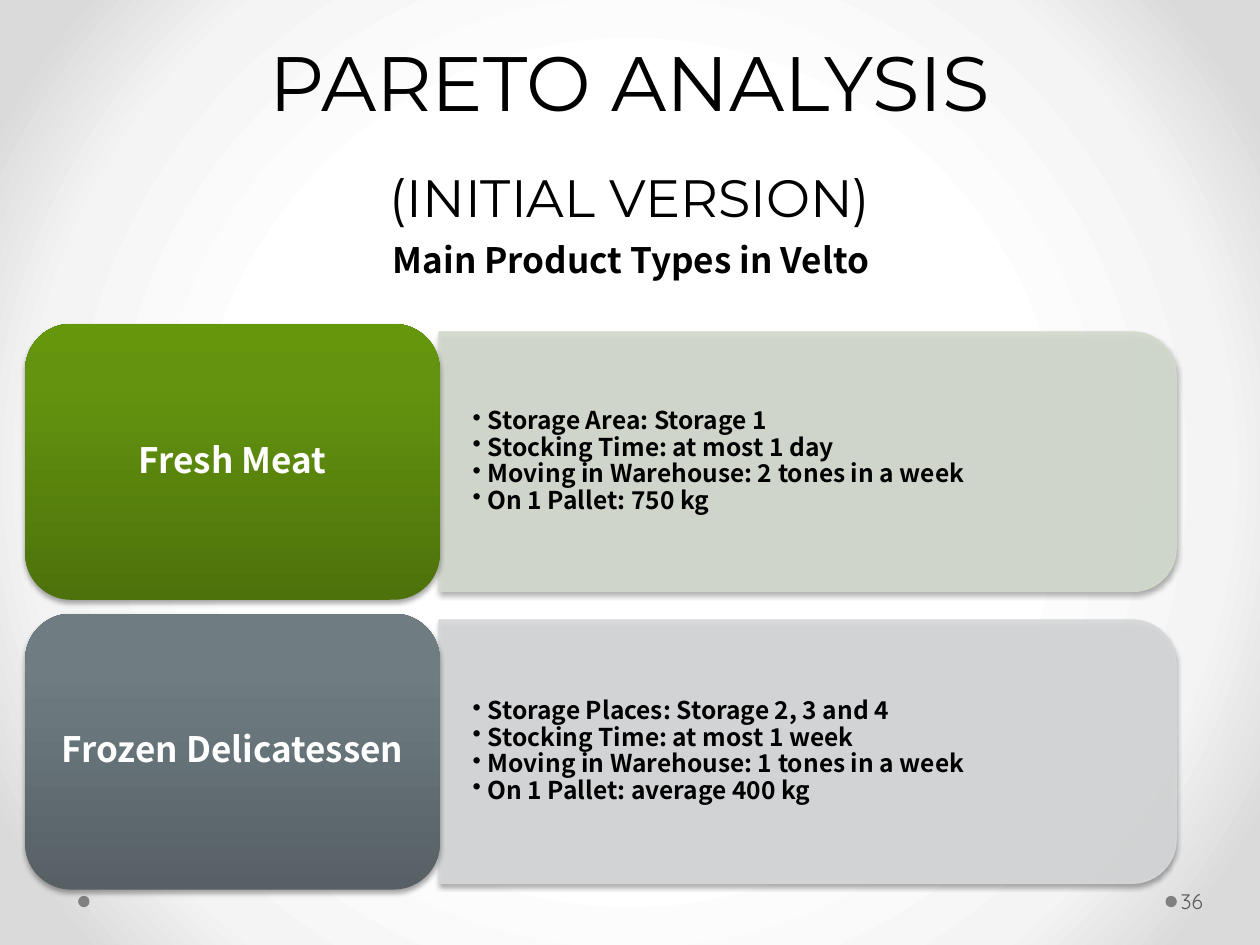
import pptx
import pptx.util
import pptx.dml.color
import pptx.enum.shapes
import pptx.enum.text
import pptx.oxml
import pptx.oxml.ns
import lxml.etree

theme = {
    "title_font": "Montserrat", "text_font": "Noto Sans CJK SC", "number_font": "Quicksand",
    "title_size": 44, "subtitle_size": 30, "heading_size": 20, "detail_size": 14, "number_size": 12,
    "black": "000000", "white": "FFFFFF", "dot": "808080", "number": "595959",
    "backdrop": [(50, "FFFFFF"), (76, "F4F4F4"), (92, "DADADA")],
    "green": [(0, "4D720B"), (80, "64940F"), (100, "65970C")], "pale_green": "D3DACD",
    "slate": [(0, "566065"), (80, "6F7D83"), (100, "6F7E84")], "pale_slate": "D6D8D9",
}
namespace = pptx.oxml.ns.nsdecls("a")
qn = pptx.oxml.ns.qn
color = pptx.dml.color.RGBColor.from_string
shape_kind = pptx.enum.shapes.MSO_SHAPE
middle = pptx.enum.text.MSO_ANCHOR.MIDDLE
center = pptx.enum.text.PP_ALIGN.CENTER


def paint_gradient(element, fill, stops, direction):
    fill.gradient()
    gradient = element.find(".//" + qn("a:gradFill"))
    for child in list(gradient):
        gradient.remove(child)
    marks = "".join(
        f'<a:gs pos="{share * 1000}"><a:srgbClr val="{value}"/></a:gs>' for share, value in stops)
    holder = pptx.oxml.parse_xml(f"<a:gradFill {namespace}><a:gsLst>{marks}</a:gsLst>{direction}</a:gradFill>")
    for child in list(holder):
        gradient.append(child)


def add_shadow(shape):
    shape.shadow.inherit = False
    effects = shape.element.spPr.find(qn("a:effectLst"))
    effects.append(pptx.oxml.parse_xml(
        f'<a:outerShdw {namespace} blurRad="39000" dist="23000" dir="5400000" rotWithShape="0">'
        '<a:srgbClr val="000000"><a:alpha val="35000"/></a:srgbClr></a:outerShdw>'))


deck = pptx.Presentation()
deck.slide_width = pptx.util.Inches(10)
deck.slide_height = pptx.util.Inches(7.5)
column = deck.slide_width / 100
row = deck.slide_height / 75
slide = deck.slides.add_slide(deck.slide_layouts[1])
paint_gradient(slide.element, slide.background.fill, theme["backdrop"],
               '<a:path path="circle"><a:fillToRect l="50000" t="50000" r="50000" b="50000"/></a:path>')

for left in (6.2, 92.5):
    dot = slide.shapes.add_shape(shape_kind.OVAL, int(left * column), int(71.1 * row),
                                 int(0.9 * column), int(0.9 * row))
    dot.shadow.inherit = False
    dot.fill.solid()
    dot.fill.fore_color.rgb = color(theme["dot"])
    dot.line.fill.background()

title = slide.shapes.title
title.left, title.top = int(5 * column), int(2.1 * row)
title.width, title.height = int(90 * column), int(16.5 * row)
title.text_frame.vertical_anchor = pptx.enum.text.MSO_ANCHOR.BOTTOM
para = title.text_frame.paragraphs[0]
para.alignment = center
para.line_spacing = pptx.util.Pt(58)
para.font.name = theme["title_font"]
para.font.color.rgb = color(theme["black"])
span = para.add_run()
span.text = "PARETO ANALYSIS"
span.font.size = pptx.util.Pt(theme["title_size"])
para.add_line_break()
span = para.add_run()
span.text = "(INITIAL VERSION)"
span.font.size = pptx.util.Pt(theme["subtitle_size"])

body = slide.placeholders[1]
body.left, body.top = int(5.1 * column), int(13.9 * row)
body.width, body.height = int(90 * column), int(59.1 * row)
body.text_frame.margin_top = int(5 * row)
para = body.text_frame.paragraphs[0]
para.text = "Main Product Types in Velto"
para.alignment = center
para.space_before = pptx.util.Pt(0)
para.font.name = theme["text_font"]
para.font.size = pptx.util.Pt(theme["heading_size"])
para.font.bold = True
para.font.color.rgb = color(theme["black"])
properties = para._p.get_or_add_pPr()
properties.set("marL", "0")
properties.set("indent", "0")
properties.insert_element_before(pptx.oxml.parse_xml(f"<a:buNone {namespace}/>"), "a:defRPr")

number = slide.shapes.add_textbox(int(93.4 * column), int(69.5 * row), int(6.1 * column), int(4 * row))
number.text_frame.word_wrap = True
number.text_frame.vertical_anchor = middle
number.text_frame.margin_left = int(0.3 * column)
para = number.text_frame.paragraphs[0]
para.text = "36"
para.font.name = theme["number_font"]
para.font.size = pptx.util.Pt(theme["number_size"])
para.font.color.rgb = color(theme["number"])

products = [
    ("Fresh Meat", "green", "pale_green", 20.6,
     ["Storage Area: Storage 1", "Stocking Time: at most 1 day",
      "Moving in Warehouse: 2 tones in a week", "On 1 Pallet: 750 kg"]),
    ("Frozen Delicatessen", "slate", "pale_slate", 20.9,
     ["Storage Places: Storage 2, 3 and 4", "Stocking Time: at most 1 week",
      "Moving in Warehouse: 1 tones in a week", "On 1 Pallet: average 400 kg"]),
]
card_height, panel_width = 21.9, 58.5
for index, (name, card_color, panel_color, panel_height, details) in enumerate(products):
    card_top = 25.7 + 23 * index
    row_center = card_top + card_height / 2

    panel = slide.shapes.add_shape(
        shape_kind.ROUND_2_SAME_RECTANGLE,
        int((34.85 + (panel_width - panel_height) / 2) * column), int((row_center - panel_width / 2) * row),
        int(panel_height * column), int(panel_width * row))
    panel.rotation = 90
    add_shadow(panel)
    panel.fill.solid()
    panel.fill.fore_color.rgb = color(theme[panel_color])
    panel.line.color.rgb = color(theme[panel_color])
    panel.line.width = pptx.util.Pt(0.75)
    for paint in panel.element.spPr.iter(qn("a:srgbClr")):
        if paint.get("val") == theme[panel_color]:
            lxml.etree.SubElement(paint, qn("a:alpha")).set("val", "90000")

    box = slide.shapes.add_textbox(int(34.8 * column), int((row_center - 9.35) * row),
                                   int(57.5 * column), int(18.7 * row))
    frame = box.text_frame
    frame.word_wrap = True
    frame.vertical_anchor = middle
    frame.margin_left = frame.margin_right = int(2.7 * column)
    frame.margin_top = frame.margin_bottom = int(1.4 * row)
    for position, detail in enumerate(details):
        para = frame.add_paragraph() if position else frame.paragraphs[0]
        para.text = detail
        para.level = 1
        para.line_spacing = 0.9
        para.font.name = theme["text_font"]
        para.font.size = pptx.util.Pt(theme["detail_size"])
        para.font.bold = True
        para.font.color.rgb = color(theme["black"])
        properties = para._p.get_or_add_pPr()
        properties.set("marL", str(int(1.2 * column)))
        properties.set("indent", str(int(-1.2 * column)))
        properties.insert_element_before(
            pptx.oxml.parse_xml(f'<a:buChar {namespace} char="•"/>'), "a:defRPr")

    card = slide.shapes.add_shape(shape_kind.ROUNDED_RECTANGLE, int(2 * column), int(card_top * row),
                                  int(32.9 * column), int(card_height * row))
    add_shadow(card)
    paint_gradient(card.element, card.fill, theme[card_color], '<a:lin ang="16200000" scaled="0"/>')
    card.line.fill.background()
    card.text_frame.word_wrap = True
    card.text_frame.vertical_anchor = middle
    para = card.text_frame.paragraphs[0]
    para.text = name
    para.alignment = center
    para.line_spacing = 0.9
    para.font.name = theme["text_font"]
    para.font.size = pptx.util.Pt(theme["heading_size"])
    para.font.bold = True
    para.font.color.rgb = color(theme["white"])

deck.save("out.pptx")
